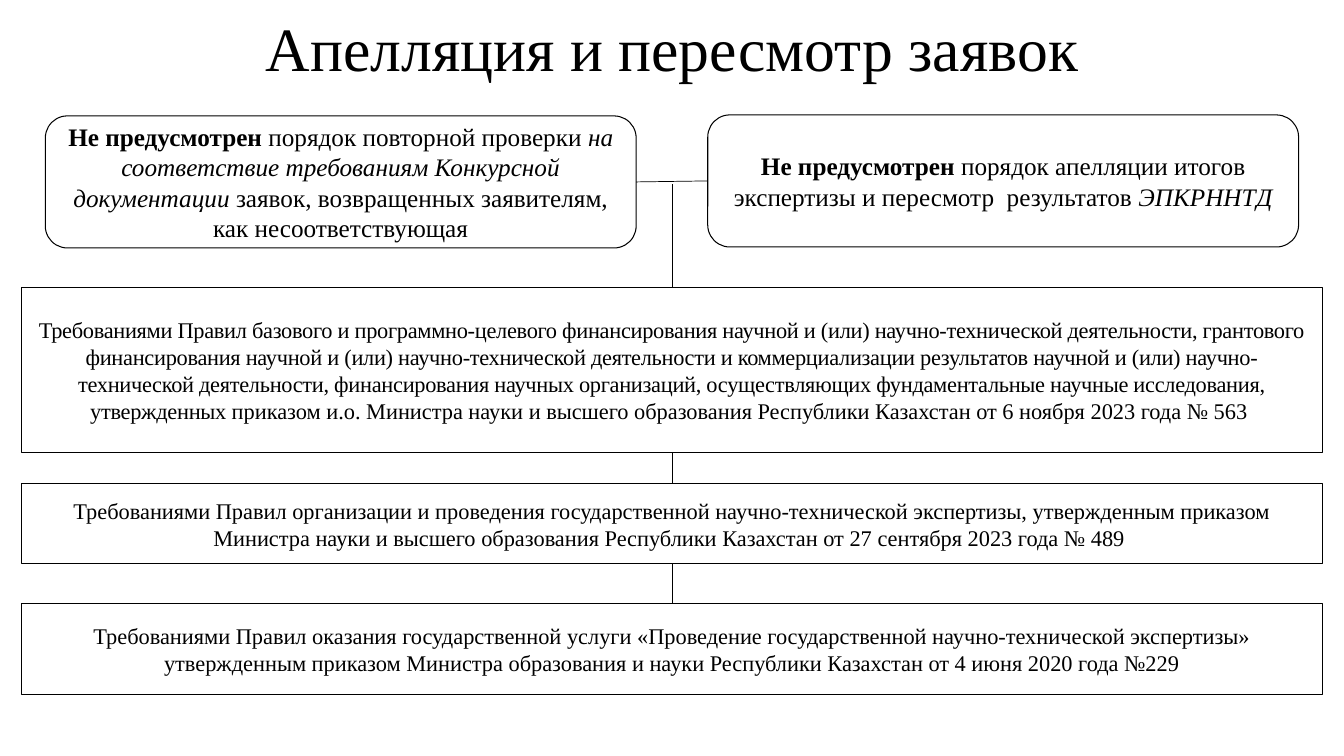
from pptx import Presentation
from pptx.dml.color import RGBColor
from pptx.enum import shapes, text
from pptx.oxml.ns import qn
from pptx.util import Inches, Pt
from lxml import etree

# Content: each run is (wording, style), style being "", "bold", "italic" or "tight"
TITLE = "Апелляция и пересмотр заявок"
GAPS = [  # left, top, runs
    (0.45, 1.15, [
        ("Не предусмотрен ", "bold"),
        ("порядок повторной проверки ", ""),
        ("на соответствие требованиям Конкурсной документации ", "italic"),
        ("заявок, возвращенных заявителям, как несоответствующая", ""),
    ]),
    (7.02, 1.14, [
        ("Не предусмотрен ", "bold"),
        ("порядок апелляции итогов экспертизы и пересмотр  результатов ", ""),
        ("ЭПКРННТД", "italic"),
    ]),
]
RULES = [  # top, height, runs
    (2.85, 1.64, [
        ("Требованиями Правил базового и программно-целевого финансирования научной и (или) "
         "научно-технической деятельности, грантового финансирования научной и (или) "
         "научно-технической деятельности и коммерциализации результатов научной и (или) "
         "научно-технической деятельности, финансирования научных организаций, "
         "осуществляющих фундаментальные научные исследования, утвержденных ", "tight"),
        ("приказом и.о. Министра науки и высшего образования Республики Казахстан "
         "от 6 ноября 2023 года № 563 ", ""),
    ]),
    (4.8, 0.79, [
        ("Требованиями Правил организации и проведения государственной научно-технической "
         "экспертизы, утвержденным приказом Министра науки и высшего образования "
         "Республики Казахстан от 27 сентября 2023 года № 489 ", ""),
    ]),
    (5.99, 0.9, [
        ("Требованиями Правил оказания государственной услуги «Проведение государственной "
         "научно-технической экспертизы» утвержденным приказом Министра образования и науки "
         "Республики Казахстан от 4 июня 2020 года №229", ""),
    ]),
]
COLORS = {"ink": "000000"}
FONT = "Times New Roman"
INK = RGBColor.from_string(COLORS["ink"])
GAP_SIZE = (5.86, 1.31)
RULE_LEFT, RULE_WIDTH = 0.21, 12.91
STEM_TOP = 1.83


def format_run(run, size, style=""):
    run.font.name = FONT
    run.font.size = Pt(size)
    run.font.color.rgb = INK
    run.font.bold = style == "bold"
    run.font.italic = style == "italic"
    if style == "tight":
        run._r.get_or_add_rPr().set("spc", "-20")


def add_box(slide, kind, left, top, width, height, runs, size):
    shape = slide.shapes.add_shape(
        kind, Inches(left), Inches(top), Inches(width), Inches(height))
    shape.shadow.inherit = False
    shape.fill.background()
    shape.line.color.rgb = INK
    shape.line.width = Pt(0.75)
    shape.text_frame.word_wrap = True
    shape.text_frame.vertical_anchor = text.MSO_ANCHOR.MIDDLE
    paragraph = shape.text_frame.paragraphs[0]
    paragraph.alignment = text.PP_ALIGN.CENTER
    for wording, style in runs:
        run = paragraph.add_run()
        run.text = wording
        format_run(run, size, style)
    return shape


def add_line(slide, start, end):
    connector = slide.shapes.add_connector(
        shapes.MSO_CONNECTOR.STRAIGHT, *[Inches(value) for value in start + end])
    connector.line.color.rgb = INK
    connector.line.width = Pt(0.5)
    etree.SubElement(connector._element.spPr, qn("a:effectLst"))
    return connector


def main():
    presentation = Presentation()
    presentation.slide_width = Inches(13.33)
    presentation.slide_height = Inches(7.5)
    slide = presentation.slides.add_slide(presentation.slide_layouts[5])

    # Title
    title = slide.shapes.title
    title.left, title.top = Inches(0.92), Inches(0.07)
    title.width, title.height = Inches(11.5), Inches(0.89)
    title.text_frame.text = TITLE
    title.text_frame.vertical_anchor = text.MSO_ANCHOR.MIDDLE
    paragraph = title.text_frame.paragraphs[0]
    paragraph.alignment = text.PP_ALIGN.CENTER
    paragraph.line_spacing = 0.9
    format_run(paragraph.runs[0], 44)

    # Rounded boxes joined by a horizontal line
    left_gap, right_gap = [
        add_box(slide, shapes.MSO_SHAPE.ROUNDED_RECTANGLE, left, top, *GAP_SIZE, runs, 18)
        for left, top, runs in GAPS]
    bridge = add_line(slide, (6.31, 1.8), (7.02, 1.8))
    bridge.begin_connect(left_gap, 3)
    bridge.end_connect(right_gap, 1)

    # Rule boxes, each hanging from the part above it
    center = RULE_LEFT + RULE_WIDTH / 2
    above, bottom = None, STEM_TOP
    for top, height, runs in RULES:
        box = add_box(slide, shapes.MSO_SHAPE.RECTANGLE,
                      RULE_LEFT, top, RULE_WIDTH, height, runs, 16)
        stem = add_line(slide, (center, bottom), (center, top))
        if above is not None:
            stem.begin_connect(above, 2)
        stem.end_connect(box, 0)
        above, bottom = box, top + height

    presentation.save("out.pptx")


if __name__ == "__main__":
    main()
